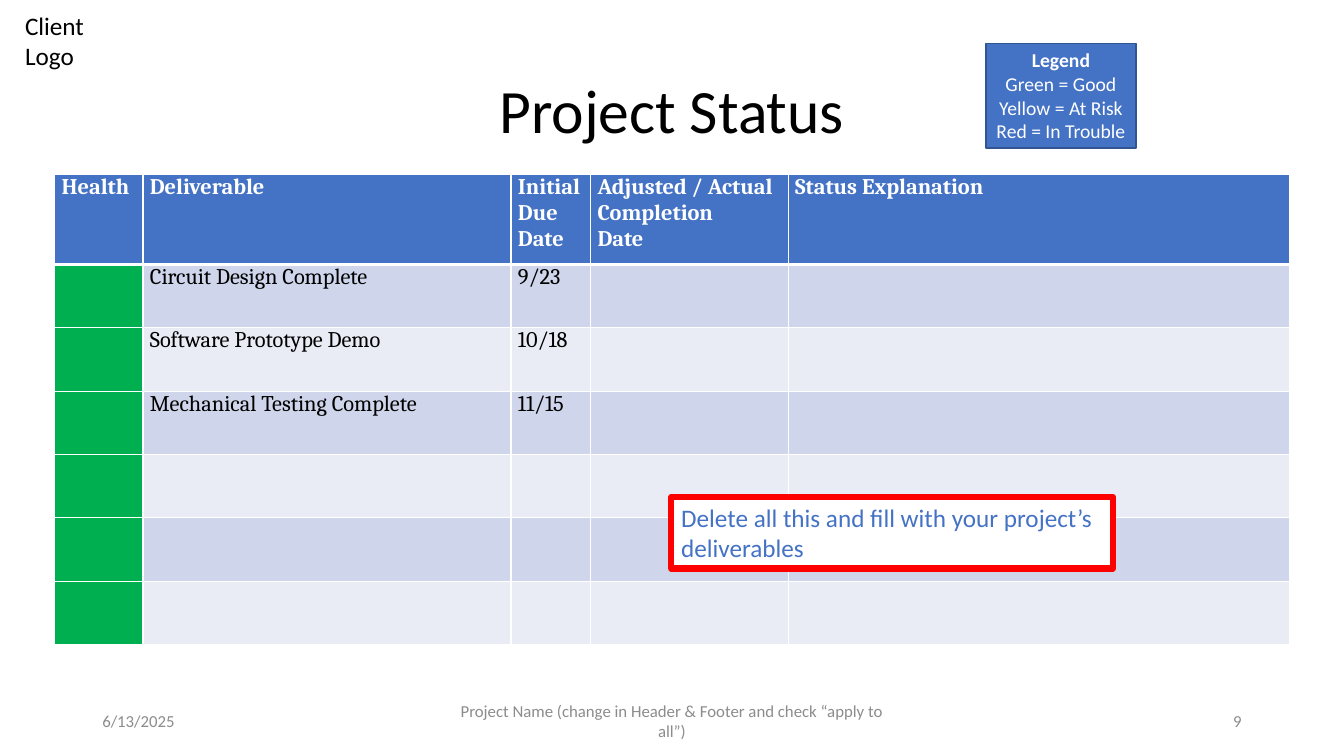
import pptx
import pptx.dml.color
import pptx.enum.shapes
import pptx.enum.text
import pptx.oxml
import pptx.oxml.ns
import pptx.util

Pt = pptx.util.Pt
RGBColor = pptx.dml.color.RGBColor
ALIGN = pptx.enum.text.PP_ALIGN
ANCHOR = pptx.enum.text.MSO_ANCHOR

BLACK = RGBColor(0x00, 0x00, 0x00)
WHITE = RGBColor(0xFF, 0xFF, 0xFF)
GREY = RGBColor(0x8C, 0x8C, 0x8C)
BLUE = RGBColor(0x44, 0x72, 0xC4)
DARK_BLUE = RGBColor(0x32, 0x54, 0x91)
RED = RGBColor(0xFF, 0x00, 0x00)
GREEN = RGBColor(0x00, 0xB0, 0x50)
BANDS = [RGBColor(0xCF, 0xD5, 0xEA), RGBColor(0xE9, 0xEB, 0xF5)]


def write(frame, text, align=ALIGN.LEFT, **font_format):
    frame.text = text
    for paragraph in frame.paragraphs:
        paragraph.alignment = align
        for name, value in font_format.items():
            if name == "color":
                paragraph.font.color.rgb = value
            else:
                setattr(paragraph.font, name, value)


def add_border(cell, side, width):
    cell._tc.get_or_add_tcPr().append(pptx.oxml.parse_xml(
        f'<a:{side} {pptx.oxml.ns.nsdecls("a")} w="{Pt(width)}"><a:solidFill>'
        f'<a:srgbClr val="{WHITE}"/></a:solidFill></a:{side}>'))


deck = pptx.Presentation()
deck.slide_width = Pt(960)
deck.slide_height = Pt(540)
slide = deck.slides.add_slide(deck.slide_layouts[6])

headings = ["Health", "Deliverable", "Initial\nDue\nDate",
            "Adjusted / Actual\nCompletion\nDate", "Status Explanation"]
deliverables = [("Circuit Design Complete", "9/23"),
                ("Software Prototype Demo", "10/18"),
                ("Mechanical Testing Complete", "11/15")]
deliverables += [("", "")] * 3
rows = [headings] + [["", task, due, "", ""] for task, due in deliverables]
column_widths = [63.1, 262.9, 56.9, 141.1, 358]
row_heights = [64.1] + [45.25] * len(deliverables)

status = slide.shapes.add_table(
    len(rows), len(headings), Pt(39), Pt(124.8),
    Pt(sum(column_widths)), Pt(sum(row_heights))).table
for column, width in zip(status.columns, column_widths):
    column.width = Pt(width)
for row, height in zip(status.rows, row_heights):
    row.height = Pt(height)

for row_index, row in enumerate(rows):
    is_header = row_index == 0
    for column_index, text in enumerate(row):
        cell = status.cell(row_index, column_index)
        cell_format = {"margin_left": Pt(5), "margin_right": Pt(5),
                       "margin_top": 0, "margin_bottom": 0}
        for name, value in cell_format.items():
            setattr(cell, name, value)
        add_border(cell, "lnL", 1)
        add_border(cell, "lnR", 1)
        add_border(cell, "lnT", 3 if row_index == 1 else 1)
        add_border(cell, "lnB", 3 if is_header else 1)
        cell.fill.solid()
        if is_header:
            cell.fill.fore_color.rgb = BLUE
        elif column_index == 0:
            cell.fill.fore_color.rgb = GREEN
        else:
            cell.fill.fore_color.rgb = BANDS[(row_index - 1) % 2]
        if text:
            write(cell.text_frame, text, name="Cambria", size=Pt(16),
                  bold=is_header, color=WHITE if is_header else BLACK)

labels = [
    ("Client\vLogo", 10.8, 3.6, 80, 51, 18, BLACK, ALIGN.LEFT, ANCHOR.TOP),
    ("Project Status", 66, 28.8, 828, 104.4, 44, BLACK, ALIGN.CENTER, ANCHOR.MIDDLE),
    ("6/13/2025", 66, 500.5, 216, 28.75, 12, GREY, ALIGN.LEFT, ANCHOR.MIDDLE),
    ("Project Name (change in Header & Footer and check “apply to all”)",
     318, 500.5, 324, 28.75, 12, GREY, ALIGN.CENTER, ANCHOR.MIDDLE),
    ("9", 678, 500.5, 216, 28.75, 12, GREY, ALIGN.RIGHT, ANCHOR.MIDDLE),
]
for text, left, top, width, height, size, color, align, anchor in labels:
    frame = slide.shapes.add_textbox(Pt(left), Pt(top), Pt(width), Pt(height)).text_frame
    frame.word_wrap = True
    frame.vertical_anchor = anchor
    write(frame, text, align, name="Calibri", size=Pt(size), color=color)
    if text == "Project Status":
        frame.paragraphs[0].line_spacing = 0.9

boxes = [
    ("Legend\nGreen = Good\nYellow = At Risk\nRed = In Trouble",
     704.2, 31, 107.3, 74.9, BLUE, DARK_BLUE, 1, 14, WHITE, ALIGN.CENTER, False),
    ("Delete all this and fill with your project’s deliverables",
     479.5, 355, 315.4, 51, WHITE, RED, 4.5, 18, BLUE, ALIGN.LEFT, True),
]
for (text, left, top, width, height, fill, outline, weight,
     size, color, align, wrap) in boxes:
    box = slide.shapes.add_shape(pptx.enum.shapes.MSO_SHAPE.RECTANGLE,
                                 Pt(left), Pt(top), Pt(width), Pt(height))
    box.shadow.inherit = False
    box.fill.solid()
    box.fill.fore_color.rgb = fill
    box.line.color.rgb = outline
    box.line.width = Pt(weight)
    box.text_frame.word_wrap = wrap
    box.text_frame.vertical_anchor = ANCHOR.TOP
    write(box.text_frame, text, align, name="Calibri", size=Pt(size), color=color)
    if text.startswith("Legend"):
        box.text_frame.paragraphs[0].font.bold = True

deck.save("out.pptx")
